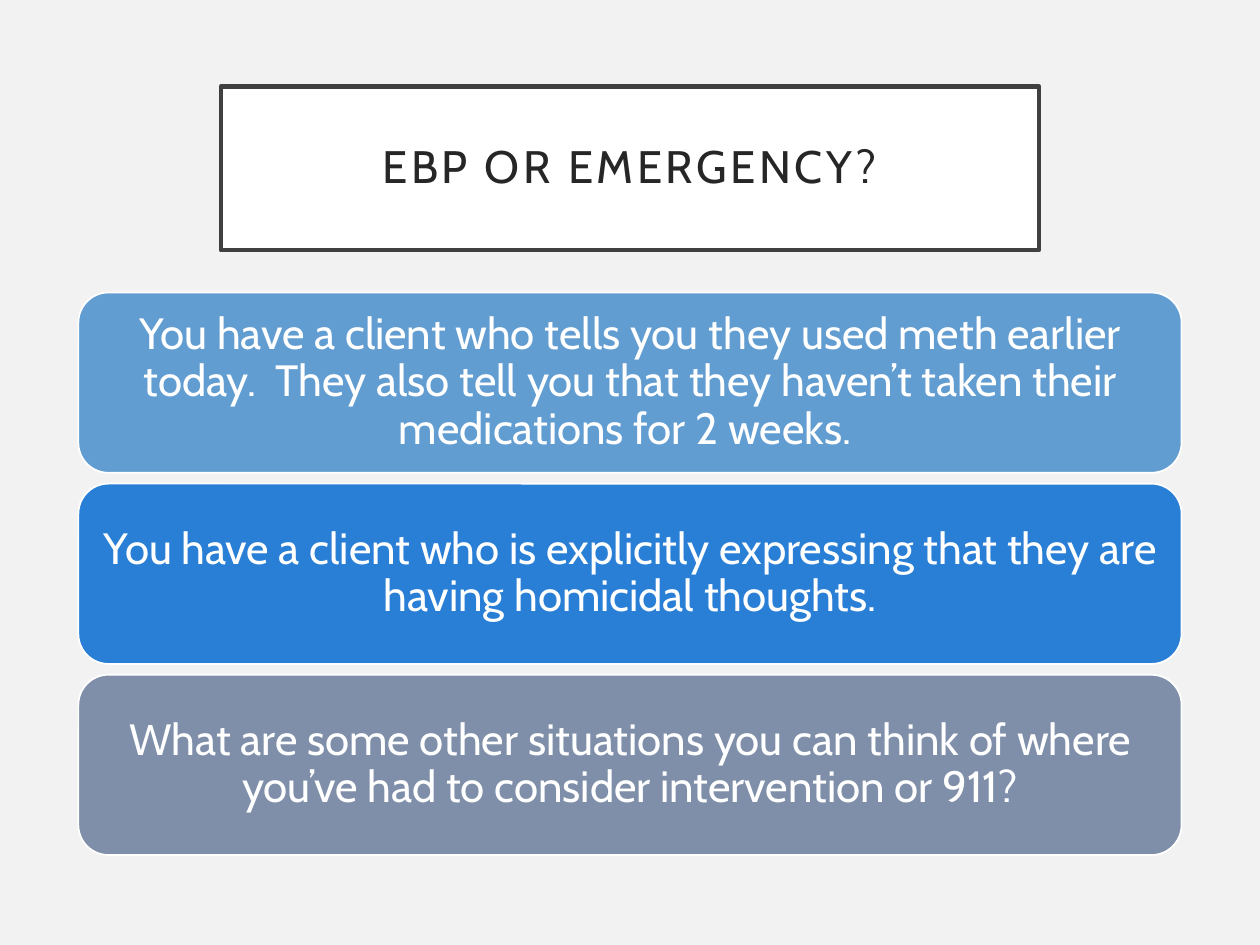
import pptx
import pptx.util
import pptx.dml.color
import pptx.enum.shapes
import pptx.enum.text

Pt = pptx.util.Pt
SHAPES = pptx.enum.shapes.MSO_SHAPE


def color(value):
    return pptx.dml.color.RGBColor.from_string(value)


def add_box(page, kind, place, fill, line, line_width, inset, text, size, ink):
    """Add a filled, outlined box with centred text and return its text run."""
    box = page.shapes.add_shape(kind, *[Pt(length) for length in place])
    box.shadow.inherit = False
    box.fill.solid()
    box.fill.fore_color.rgb = color(fill)
    box.line.color.rgb = color(line)
    box.line.width = Pt(line_width)

    frame = box.text_frame
    frame.word_wrap = True
    frame.vertical_anchor = pptx.enum.text.MSO_ANCHOR.MIDDLE
    frame.margin_left = frame.margin_right = Pt(inset)
    frame.margin_top = frame.margin_bottom = Pt(inset)

    para = frame.paragraphs[0]
    para.alignment = pptx.enum.text.PP_ALIGN.CENTER
    para.line_spacing = 0.9
    span = para.add_run()
    span.text = text
    span.font.name = "Cabin"
    span.font.size = Pt(size)
    span.font.color.rgb = color(ink)
    return span


# Deck and page
deck = pptx.Presentation()
deck.slide_width = Pt(720)
deck.slide_height = Pt(540)
page = deck.slides.add_slide(deck.slide_layouts[6])
page.background.fill.solid()
page.background.fill.fore_color.rgb = color("F2F2F2")

# Scenario cards, stacked at an equal pitch
scenarios = [
    ("629DD1", "You have a client who tells you they used meth earlier today.  "
               "They also tell you that they haven’t taken their medications for 2 weeks. "),
    ("297FD5", "You have a client who is explicitly expressing that they are "
               "having homicidal thoughts."),
    ("7F8FA9", "What are some other situations you can think of where "
               "you’ve had to consider intervention or 911?"),
]
card_top, card_pitch = 167.2, 109.2
for index, (fill, text) in enumerate(scenarios):
    place = (44.8, card_top + index * card_pitch, 630.4, 103)
    add_box(page, SHAPES.ROUNDED_RECTANGLE, place, fill, "FFFFFF", 1, 7.2,
            text, 25, "FFFFFF")

# Title box with letter spacing of 2 points
title = add_box(page, SHAPES.RECTANGLE, (126.2, 49.4, 467.6, 93.6), "FFFFFF",
                "404040", 2.5, 14.4, "EBP OR EMERGENCY?", 26, "262626")
title._r.get_or_add_rPr().set("spc", "200")

deck.save("out.pptx")
